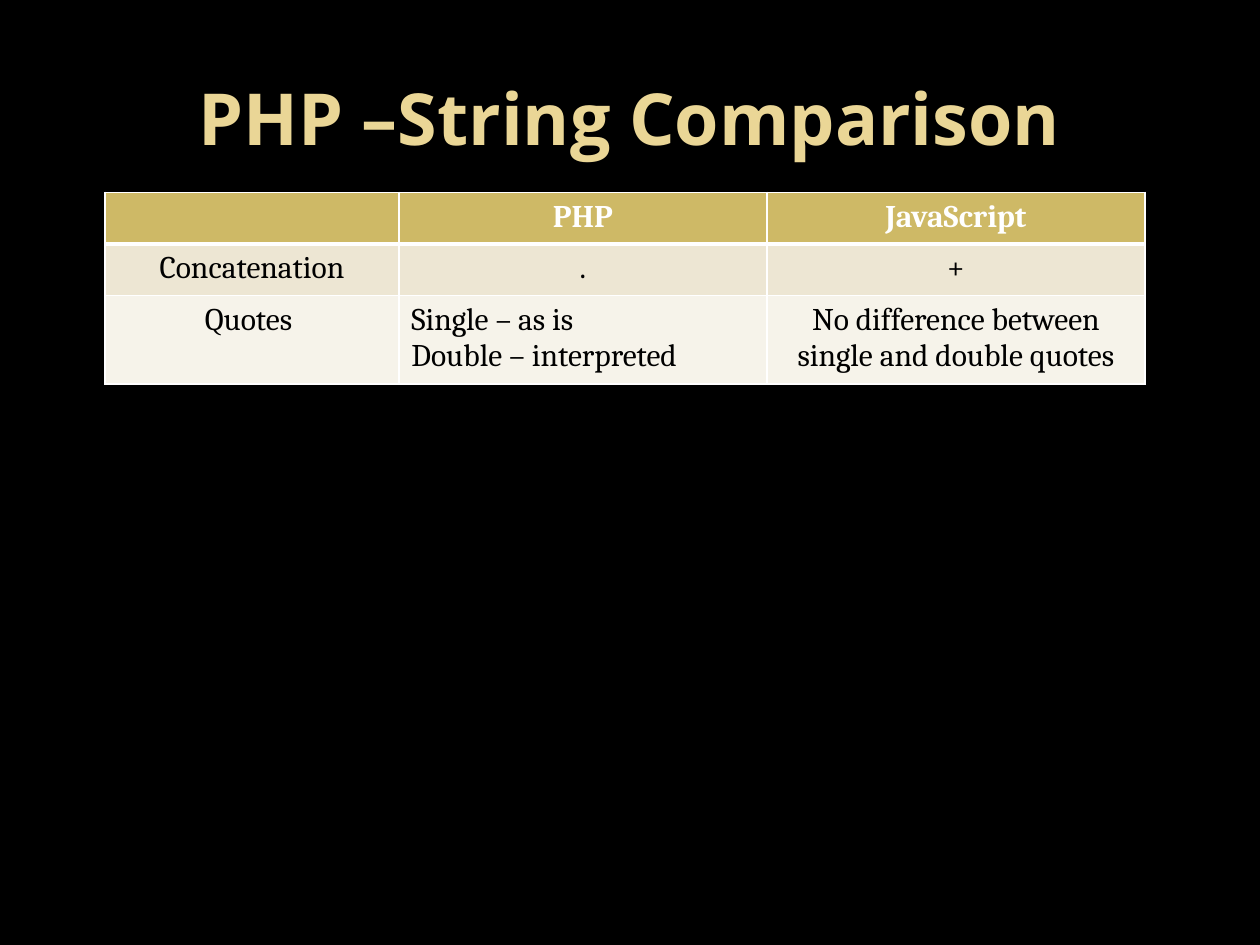
from dataclasses import dataclass

from lxml.etree import SubElement
from pptx import Presentation
from pptx.dml.color import RGBColor
from pptx.enum.text import MSO_ANCHOR as Anchor, PP_ALIGN as Align
from pptx.oxml.ns import qn
from pptx.slide import Slide
from pptx.table import _Cell as Cell
from pptx.text.text import _Paragraph as Paragraph
from pptx.util import Cm, Pt

BLACK = RGBColor(0x00, 0x00, 0x00)
WHITE = RGBColor(0xFF, 0xFF, 0xFF)
TITLE_GOLD = RGBColor(0xEA, 0xD6, 0x96)
HEADER_GOLD = RGBColor(0xCE, 0xB9, 0x66)
BAND_DARK = RGBColor(0xED, 0xE6, 0xD3)
BAND_LIGHT = RGBColor(0xF6, 0xF3, 0xEA)

COLUMN_WIDTHS = (Cm(5.92), Cm(7.42), Cm(7.62))
THIN, THICK = Pt(1), Pt(3)


@dataclass
class Row:
    cells: tuple[str, ...]
    fill: RGBColor
    height: int = Cm(1.04)
    color: RGBColor = BLACK
    bold: bool = False
    top: int = THIN
    bottom: int = THIN


ROWS = (
    Row(("", "PHP", "JavaScript"), HEADER_GOLD, color=WHITE, bold=True, bottom=THICK),
    Row(("Concatenation", ".", "+"), BAND_DARK, top=THICK),
    Row(
        (
            "Quotes ",
            "Single – as is\nDouble – interpreted",
            "No difference between single and double quotes",
        ),
        BAND_LIGHT,
        height=Cm(1.75),
    ),
)


def add_run(paragraph: Paragraph, text: str, font_name: str, size: int,
            color: RGBColor, bold: bool) -> None:
    run = paragraph.add_run()
    run.text = text
    run.font.name = font_name
    run.font.size = Pt(size)
    run.font.bold = bold
    run.font.color.rgb = color


def set_borders(cell: Cell, top: int, bottom: int) -> None:
    properties = cell._tc.get_or_add_tcPr()
    sides = (("lnL", THIN), ("lnR", THIN), ("lnT", top), ("lnB", bottom))
    for side, width in sides:
        line = SubElement(properties, qn(f"a:{side}"), w=str(int(width)))
        fill = SubElement(line, qn("a:solidFill"))
        SubElement(fill, qn("a:srgbClr"), val=str(WHITE))


def fill_cell(cell: Cell, text: str, row: Row) -> None:
    # Borders come before the fill in the cell properties
    set_borders(cell, row.top, row.bottom)
    cell.fill.solid()
    cell.fill.fore_color.rgb = row.fill
    lines = text.split("\n")
    for index, line in enumerate(lines):
        frame = cell.text_frame
        paragraph = frame.add_paragraph() if index else frame.paragraphs[0]
        paragraph.alignment = Align.LEFT if len(lines) > 1 else Align.CENTER
        if line:
            add_run(paragraph, line, "Cambria", 18, row.color, row.bold)


def add_title(slide: Slide, text: str) -> None:
    shape = slide.shapes.add_textbox(Cm(1.27), Cm(0.76), Cm(22.86), Cm(3.18))
    frame = shape.text_frame
    frame.word_wrap = True
    frame.vertical_anchor = Anchor.MIDDLE
    paragraph = frame.paragraphs[0]
    paragraph.alignment = Align.CENTER
    add_run(paragraph, text, "Open Sans", 41, TITLE_GOLD, True)


def add_comparison_table(slide: Slide) -> None:
    table = slide.shapes.add_table(
        len(ROWS), len(COLUMN_WIDTHS), Cm(2.12), Cm(3.88),
        sum(COLUMN_WIDTHS), sum(row.height for row in ROWS),
    ).table
    for column, width in zip(table.columns, COLUMN_WIDTHS):
        column.width = width
    for table_row, row in zip(table.rows, ROWS):
        table_row.height = row.height
        for cell, text in zip(table_row.cells, row.cells):
            fill_cell(cell, text, row)


def main() -> None:
    presentation = Presentation()
    presentation.slide_width = Cm(25.4)
    presentation.slide_height = Cm(19.05)
    slide = presentation.slides.add_slide(presentation.slide_layouts[6])

    # Background
    slide.background.fill.solid()
    slide.background.fill.fore_color.rgb = BLACK

    # Content
    add_title(slide, "PHP –String Comparison")
    add_comparison_table(slide)
    presentation.save("out.pptx")


if __name__ == "__main__":
    main()
